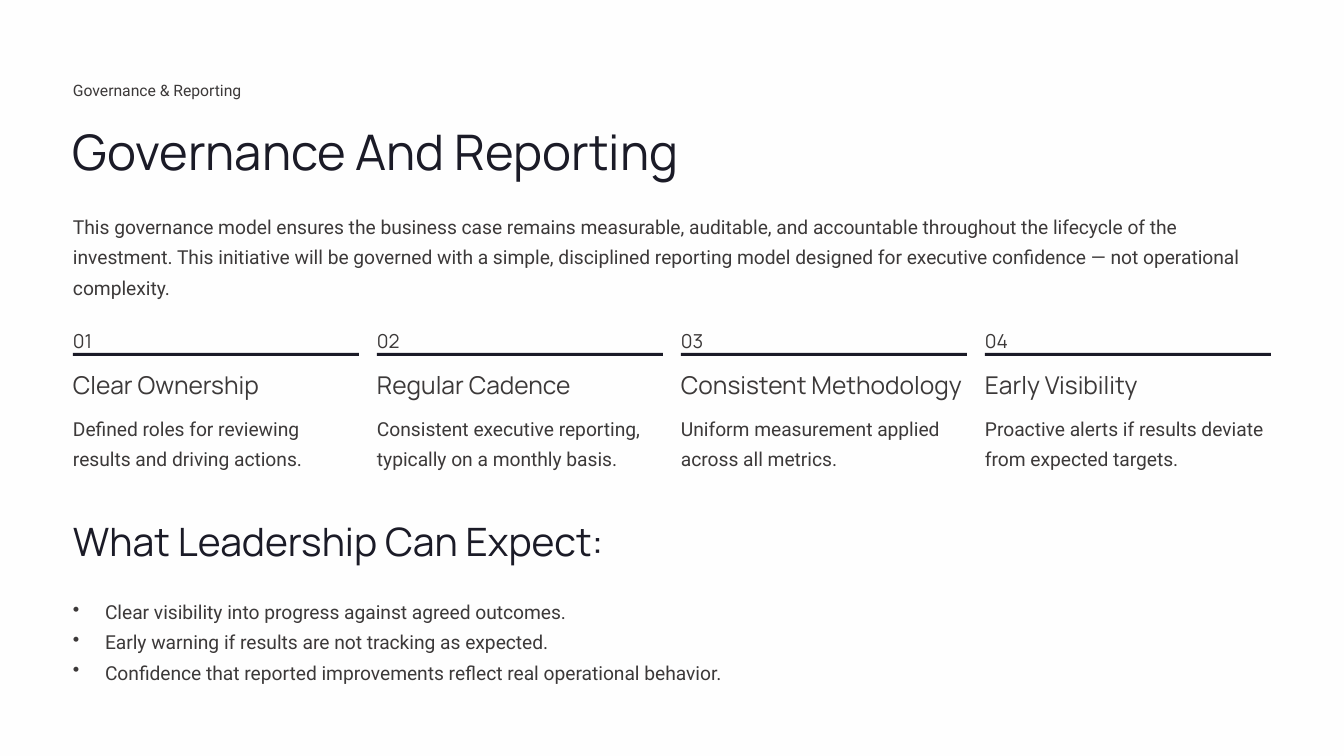
from lxml import etree
from pptx import Presentation
from pptx import util as u
from pptx.dml.color import RGBColor
from pptx.enum import shapes, text
from pptx.oxml.ns import qn

PX = 914400 / 84
INK, GREY, PAPER = "1B1B27", "3C3939", "FEFEFE"
LEFT, FULL_WIDTH = 73, 1198
COLUMN_WIDTH, COLUMN_STEP = 286, 304
BULLET_INDENT = 32

LABEL = {"name": "Roboto", "size": 13.5, "color": GREY, "spacing": 21}
TITLE = {"name": "Manrope", "size": 42, "color": INK, "spacing": 53}
BODY = {"name": "Roboto", "size": 16.5, "color": GREY, "spacing": 26}
NUMBER = {"name": "Manrope", "size": 16.5, "color": GREY, "spacing": 26}
HEADING = {"name": "Manrope", "size": 21, "color": GREY, "spacing": 26.5}
SUBTITLE = {"name": "Manrope", "size": 33.5, "color": INK, "spacing": 42}

PRINCIPLES = [
    ("Clear Ownership", "Defined roles for reviewing results and driving actions."),
    ("Regular Cadence", "Consistent executive reporting, typically on a monthly basis."),
    ("Consistent Methodology", "Uniform measurement applied across all metrics."),
    ("Early Visibility", "Proactive alerts if results deviate from expected targets."),
]
EXPECTATIONS = [
    "Clear visibility into progress against agreed outcomes.",
    "Early warning if results are not tracking as expected.",
    "Confidence that reported improvements reflect real operational behavior.",
]


def px(*lengths):
    return [round(length * PX) for length in lengths]


def write(box, place, lines, style, bulleted=False):
    """Place a text shape and fill it with one paragraph per line."""
    box.left, box.top, box.width, box.height = px(*place)
    frame = box.text_frame
    layout = {"margin_left": 0, "margin_top": 0, "margin_right": 0, "margin_bottom": 0,
              "word_wrap": True, "auto_size": text.MSO_AUTO_SIZE.NONE,
              "vertical_anchor": text.MSO_ANCHOR.TOP}
    for key, value in layout.items():
        setattr(frame, key, value)
    frame.text = "\n".join(lines)
    for paragraph in frame.paragraphs:
        paragraph.alignment = text.PP_ALIGN.LEFT
        paragraph.line_spacing = u.Pt(style["spacing"])
        paragraph.space_before = u.Pt(0)
        if bulleted:
            properties = paragraph._p.get_or_add_pPr()
            indent = px(BULLET_INDENT)[0]
            properties.set("marL", str(indent))
            properties.set("indent", str(-indent))
            etree.SubElement(properties, qn("a:buChar")).set("char", "•")
        font = paragraph.runs[0].font
        font.name = style["name"]
        font.size = u.Pt(style["size"])
        font.color.rgb = RGBColor.from_string(style["color"])


deck = Presentation()
deck.slide_width, deck.slide_height = px(1344, 756)
slide = deck.slides.add_slide(deck.slide_layouts[5])
slide.background.fill.solid()
slide.background.fill.fore_color.rgb = RGBColor.from_string(PAPER)

write(slide.shapes.title, (LEFT, 118, 618, 62), ["Governance And Reporting"], TITLE)

blocks = [
    ((LEFT, 75, FULL_WIDTH, 24), ["Governance & Reporting"], LABEL, False),
    ((LEFT, 208, FULL_WIDTH, 92),
     ["This governance model ensures the business case remains measurable, auditable, "
      "and accountable throughout the lifecycle of the investment. This initiative will "
      "be governed with a simple, disciplined reporting model designed for executive "
      "confidence — not operational complexity."], BODY, False),
    ((LEFT, 515, 540, 50), ["What Leadership Can Expect:"], SUBTITLE, False),
    ((LEFT, 593, FULL_WIDTH, 92), EXPECTATIONS, BODY, True),
]
for index, (heading, detail) in enumerate(PRINCIPLES):
    left = LEFT + index * COLUMN_STEP
    rule = slide.shapes.add_shape(shapes.MSO_SHAPE.RECTANGLE, *px(left, 353, COLUMN_WIDTH, 3))
    rule.shadow.inherit = False
    rule.fill.solid()
    rule.fill.fore_color.rgb = RGBColor.from_string(INK)
    rule.line.fill.background()
    blocks += [
        ((left, 322, 24, 24), [f"{index + 1:02}"], NUMBER, False),
        ((left, 368, COLUMN_WIDTH, 31), [heading], HEADING, False),
        ((left, 410, COLUMN_WIDTH, 62), [detail], BODY, False),
    ]

for place, lines, style, bulleted in blocks:
    write(slide.shapes.add_textbox(0, 0, 0, 0), place, lines, style, bulleted)

deck.save("out.pptx")
